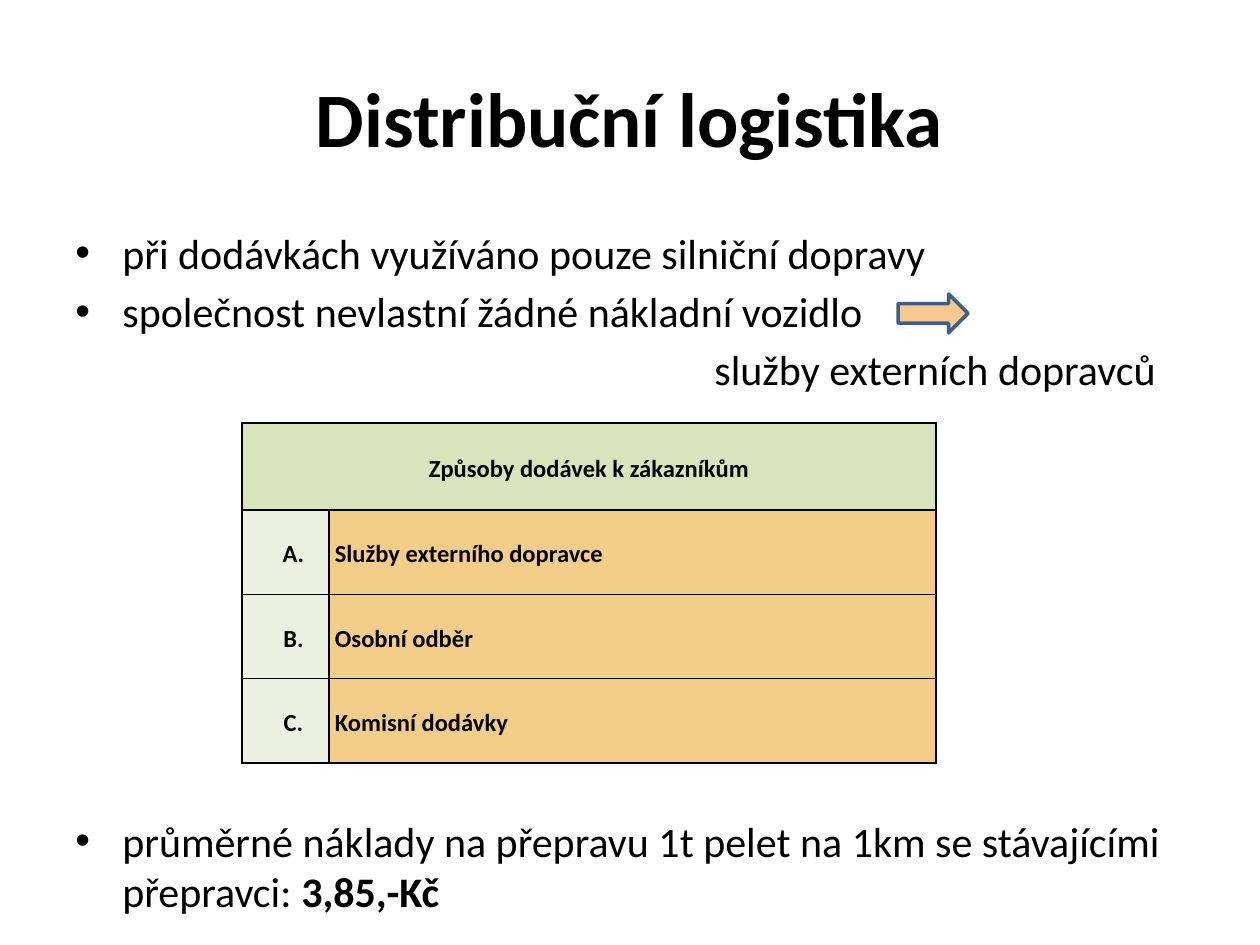
from dataclasses import dataclass

from lxml import etree
from pptx import Presentation
from pptx.dml.color import RGBColor
from pptx.enum.shapes import MSO_SHAPE
from pptx.enum.text import MSO_ANCHOR, PP_ALIGN
from pptx.oxml.ns import qn
from pptx.util import Emu, Pt

CENTER, LEFT = PP_ALIGN.CENTER, PP_ALIGN.LEFT
MIDDLE, TOP = MSO_ANCHOR.MIDDLE, MSO_ANCHOR.TOP
RIGHT_ARROW = MSO_SHAPE.RIGHT_ARROW
PX_PER_INCH = 126
BULLET_INDENT = 47
OUTCOME_INDENT = 639


@dataclass(frozen=True)
class Theme:
    font: str = "Calibri"
    title_size: int = 44
    body_size: int = 24
    table_size: int = 14
    text: str = "000000"
    header_fill: str = "D8E4BC"
    letter_fill: str = "EBF1DE"
    method_fill: str = "F4CD88"
    arrow_fill: str = "F5C98F"
    arrow_line: str = "3A5F8C"


THEME = Theme()


def px(length):
    return Emu(round(length * 914400 / PX_PER_INCH))


def paint(fill, color):
    fill.solid()
    fill.fore_color.rgb = RGBColor.from_string(color)


def style_para(para, size, bold=False, align=LEFT):
    para.alignment = align
    for span in para.runs:
        span.font.name = THEME.font
        span.font.size = Pt(size)
        span.font.bold = bold
        span.font.color.rgb = RGBColor.from_string(THEME.text)


def indent_para(para, left, bullet=False):
    """Set the left indent; a bullet hangs in front of it."""
    properties = para._p.get_or_add_pPr()
    properties.set("marL", str(px(left)))
    properties.set("indent", str(-px(left) if bullet else 0))
    if bullet:
        etree.SubElement(properties, qn("a:buFont")).set("typeface", "Arial")
        etree.SubElement(properties, qn("a:buChar")).set("char", "•")


def add_text_frame(page, box, anchor):
    frame = page.shapes.add_textbox(*map(px, box)).text_frame
    frame.word_wrap = True
    frame.vertical_anchor = anchor
    return frame


def add_title(page, box, text):
    para = add_text_frame(page, box, MIDDLE).paragraphs[0]
    para.text = text
    style_para(para, THEME.title_size, bold=True, align=CENTER)


def add_points(page, box, points, outcome=None):
    """Add bulleted points and, below them, an indented line without a bullet."""
    frame = add_text_frame(page, box, TOP)
    lines = points + ([outcome] if outcome else [])
    frame.text = "\n".join(lines)
    for index, para in enumerate(frame.paragraphs):
        bullet = index < len(points)
        if index:
            para.space_before = Pt(4.5)
        indent_para(para, BULLET_INDENT if bullet else OUTCOME_INDENT, bullet)
        style_para(para, THEME.body_size)
    return frame


def add_cost(page, box, label, amount):
    para = add_points(page, box, [label]).paragraphs[0]
    para.add_run().text = amount
    style_para(para, THEME.body_size)
    para.runs[-1].font.bold = True


def add_cell_borders(cell):
    properties = cell._tc.get_or_add_tcPr()
    for position, side in enumerate(("lnL", "lnR", "lnT", "lnB")):
        line = etree.Element(qn(f"a:{side}"), w=str(Pt(1)))
        solid = etree.SubElement(line, qn("a:solidFill"))
        etree.SubElement(solid, qn("a:srgbClr")).set("val", THEME.text)
        properties.insert(position, line)


def fill_cell(cell, text, color, align, left_margin=6):
    cell.text = text
    cell.vertical_anchor = MIDDLE
    cell.margin_left, cell.margin_right = px(left_margin), px(6)
    cell.margin_top = cell.margin_bottom = 0
    para = cell.text_frame.paragraphs[0]
    para.line_spacing = 1.15
    style_para(para, THEME.table_size, bold=True, align=align)
    paint(cell.fill, color)


def add_delivery_table(page, box, heading, methods):
    left, top, width, height = box
    letter_width, header_height = 87, 87
    table = page.shapes.add_table(len(methods) + 1, 2, *map(px, box)).table
    table.columns[0].width = px(letter_width)
    table.columns[1].width = px(width - letter_width)
    for row in table.rows:
        row.height = px((height - header_height) / len(methods))
    table.rows[0].height = px(header_height)

    table.cell(0, 0).merge(table.cell(0, 1))
    fill_cell(table.cell(0, 0), heading, THEME.header_fill, CENTER)
    for index, (letter, method) in enumerate(methods, start=1):
        fill_cell(table.cell(index, 0), letter, THEME.letter_fill, CENTER, left_margin=22)
        fill_cell(table.cell(index, 1), method, THEME.method_fill, LEFT)
    for cell in table.iter_cells():
        add_cell_borders(cell)


def add_arrow(page, box):
    arrow = page.shapes.add_shape(RIGHT_ARROW, *map(px, box))
    arrow.shadow.inherit = False
    paint(arrow.fill, THEME.arrow_fill)
    paint(arrow.line.fill, THEME.arrow_line)
    arrow.line.width = Pt(2)


def main():
    deck = Presentation()
    deck.slide_width, deck.slide_height = px(1260), px(945)
    page = deck.slides.add_slide(deck.slide_layouts[6])

    add_title(page, (63, 38, 1134, 158), "Distribuční logistika")
    add_points(
        page,
        (63, 221, 1134, 190),
        ["při dodávkách využíváno pouze silniční dopravy",
         "společnost nevlastní žádné nákladní vozidlo"],
        outcome="služby externích dopravců",
    )
    add_delivery_table(
        page,
        (242, 423, 694, 340),
        "Způsoby dodávek k zákazníkům",
        [("A.", "Služby externího dopravce"),
         ("B.", "Osobní odběr"),
         ("C.", "Komisní dodávky")],
    )
    add_cost(
        page,
        (63, 809, 1134, 120),
        "průměrné náklady na přepravu 1t pelet na 1km se stávajícími přepravci: ",
        "3,85,-Kč",
    )
    add_arrow(page, (898, 294, 70, 39))
    deck.save("out.pptx")


if __name__ == "__main__":
    main()
